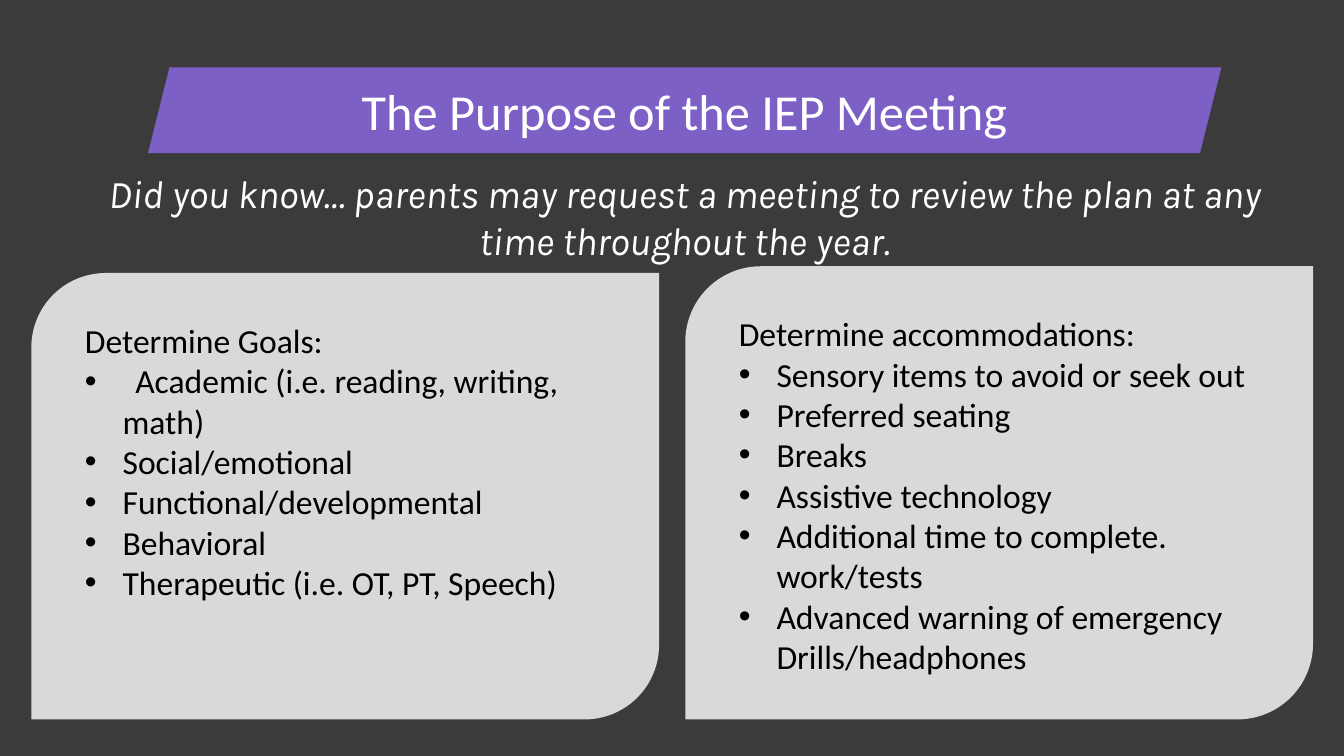
from lxml import etree
from pptx import Presentation
from pptx.dml.color import RGBColor
from pptx.enum import shapes, text
from pptx.oxml.ns import qn
from pptx.util import Cm, Pt

CHARCOAL = RGBColor(0x3B, 0x3B, 0x3B)
PURPLE = RGBColor(0x7C, 0x60, 0xC6)
GREY = RGBColor(0xD9, 0xD9, 0xD9)
WHITE = RGBColor(0xFF, 0xFF, 0xFF)
BLACK = RGBColor(0x00, 0x00, 0x00)

PANEL_BOTTOM = Cm(18.13)
PANEL_WIDTH = Cm(15.82)
BULLET_INDENT = Cm(0.95)

GOALS = [
    "\tAcademic (i.e. reading, writing, math)",
    "Social/emotional",
    "Functional/developmental",
    "Behavioral",
    "Therapeutic (i.e. OT, PT, Speech)",
]
ACCOMMODATIONS = [
    "Sensory items to avoid or seek out",
    "Preferred seating",
    "Breaks",
    "Assistive technology",
    "Additional time to complete. work/tests",
    "Advanced warning of emergency Drills/headphones",
]


def add_flat_shape(slide, preset, box, colour):
    shape = slide.shapes.add_shape(preset, *box)
    shape.shadow.inherit = False
    shape.fill.solid()
    shape.fill.fore_color.rgb = colour
    shape.line.fill.background()
    return shape


def add_text_frame(slide, box):
    frame = slide.shapes.add_textbox(*box).text_frame
    frame.word_wrap = True
    return frame


def add_run(paragraph, words, size, colour, font="Calibri", italic=False):
    run = paragraph.add_run()
    run.text = words
    run.font.name = font
    run.font.size = Pt(size)
    run.font.italic = italic
    run.font.color.rgb = colour


def add_bullet(paragraph):
    properties = paragraph._p.get_or_add_pPr()
    properties.set("marL", str(BULLET_INDENT))
    properties.set("indent", str(-BULLET_INDENT))
    etree.SubElement(properties, qn("a:buFont"), typeface="Arial")
    etree.SubElement(properties, qn("a:buChar"), char="•")


def add_title_banner(slide, box):
    banner = add_flat_shape(slide, shapes.MSO_SHAPE.PARALLELOGRAM, box, PURPLE)
    banner.text_frame.vertical_anchor = text.MSO_ANCHOR.MIDDLE
    title = banner.text_frame.paragraphs[0]
    title.alignment = text.PP_ALIGN.CENTER
    add_run(title, "The Purpose of the IEP Meeting", 36, WHITE)


def add_did_you_know(slide, box):
    fact = add_text_frame(slide, box).paragraphs[0]
    fact.alignment = text.PP_ALIGN.CENTER
    add_run(fact, "Did you know… parents may request a meeting to review "
            "the plan at any time throughout the year.",
            28, WHITE, "Karla", True)


def add_panel(slide, left, top, list_width, heading, items):
    """Draw a grey panel down to PANEL_BOTTOM with a headed bullet list."""
    height = PANEL_BOTTOM - top
    add_flat_shape(slide, shapes.MSO_SHAPE.ROUND_2_DIAG_RECTANGLE,
                   (left, top, PANEL_WIDTH, height), GREY)
    inset_x, inset_y = Cm(1.1), Cm(1.06)
    frame = add_text_frame(slide, (left + inset_x, top + inset_y,
                                   list_width, height - 2 * inset_y))
    add_run(frame.paragraphs[0], heading, 24, BLACK)
    for item in items:
        paragraph = frame.add_paragraph()
        add_bullet(paragraph)
        add_run(paragraph, item, 24, BLACK)


def main():
    deck = Presentation()
    deck.slide_width, deck.slide_height = Cm(33.87), Cm(19.05)
    slide = deck.slides.add_slide(deck.slide_layouts[6])
    slide.background.fill.solid()
    slide.background.fill.fore_color.rgb = CHARCOAL

    add_title_banner(slide, (Cm(3.73), Cm(1.7), Cm(27.05), Cm(2.16)))
    add_panel(slide, Cm(0.79), Cm(6.88), Cm(13.44),
              "Determine Goals:", GOALS)
    add_panel(slide, Cm(17.27), Cm(6.71), Cm(14.25),
              "Determine accommodations:", ACCOMMODATIONS)
    add_did_you_know(slide, (Cm(2.29), Cm(4.14), Cm(29.92), Cm(2.64)))
    deck.save("out.pptx")


if __name__ == "__main__":
    main()
